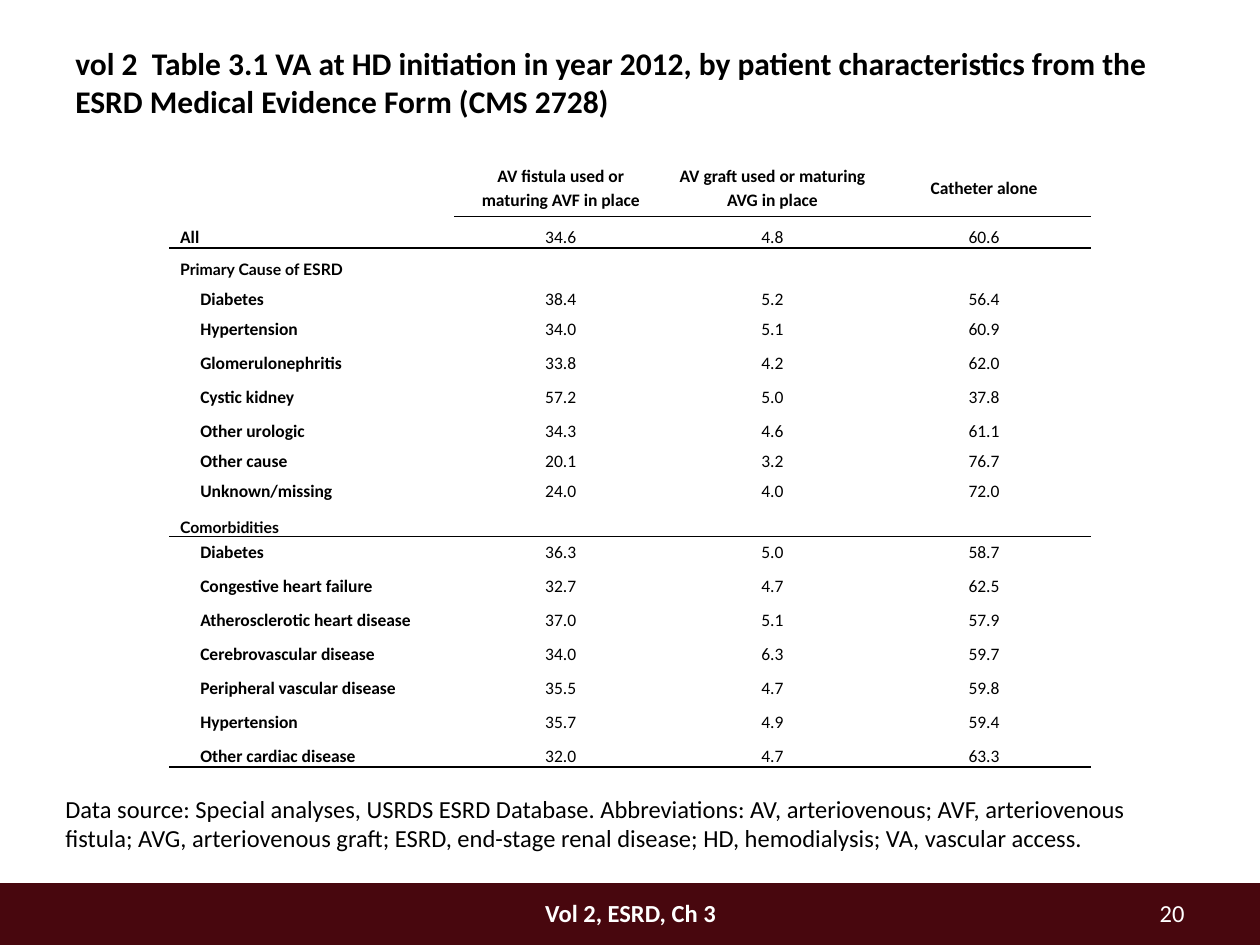
import lxml.etree
import pptx
import pptx.dml.color
import pptx.enum.shapes
import pptx.enum.text
import pptx.oxml.ns
import pptx.util

Inches, Pt = pptx.util.Inches, pptx.util.Pt
ALIGN, ANCHOR = pptx.enum.text.PP_ALIGN, pptx.enum.text.MSO_ANCHOR
BLACK = pptx.dml.color.RGBColor(0x00, 0x00, 0x00)
WHITE = pptx.dml.color.RGBColor(0xFF, 0xFF, 0xFF)
MAROON = pptx.dml.color.RGBColor(0x48, 0x07, 0x0E)

VALUE = {"name": "Calibri", "size": Pt(10), "bold": False}
LABEL = VALUE | {"bold": True}
SECTION = {"name": "Lato", "size": Pt(9), "bold": True}


def write(paragraph, text, font, color=BLACK, alignment=ALIGN.LEFT):
    paragraph.alignment = alignment
    run = paragraph.add_run()
    run.text = text
    for attribute, value in font.items():
        setattr(run.font, attribute, value)
    run.font.color.rgb = color


def add_border(cell, side):
    properties = cell._tc.get_or_add_tcPr()
    line = lxml.etree.Element(pptx.oxml.ns.qn(f"a:{side}"), w=str(Pt(1)))
    fill = lxml.etree.SubElement(line, pptx.oxml.ns.qn("a:solidFill"))
    lxml.etree.SubElement(fill, pptx.oxml.ns.qn("a:srgbClr"), val=str(BLACK))
    properties.insert(0, line)


deck = pptx.Presentation()
deck.slide_width, deck.slide_height = Inches(10), Inches(7.5)
slide = deck.slides.add_slide(deck.slide_layouts[6])

# Footer band
band = slide.shapes.add_shape(pptx.enum.shapes.MSO_SHAPE.RECTANGLE,
                              Inches(0), Inches(7.01), Inches(10), Inches(0.5))
band.shadow.inherit = False
band.fill.solid()
band.fill.fore_color.rgb = MAROON
band.line.fill.background()

# Title, source note, chapter and page number
texts = [
    ((0.5, 0.3, 9, 0.62), 18, True, BLACK, ALIGN.LEFT,
     "vol 2  Table 3.1 VA at HD initiation in year 2012, by patient "
     "characteristics from the ESRD Medical Evidence Form (CMS 2728)"),
    ((0.42, 6.25, 9.08, 0.58), 14, False, BLACK, ALIGN.LEFT,
     "Data source: Special analyses, USRDS ESRD Database. Abbreviations: AV, "
     "arteriovenous; AVF, arteriovenous fistula; AVG, arteriovenous graft; "
     "ESRD, end-stage renal disease; HD, hemodialysis; VA, vascular access."),
    ((3.92, 7.08, 2.17, 0.33), 14, True, WHITE, ALIGN.CENTER, "Vol 2, ESRD, Ch 3"),
    ((8.5, 7.08, 1, 0.3), 14, False, WHITE, ALIGN.RIGHT, "20"),
]
for place, size, bold, color, alignment, text in texts:
    frame = slide.shapes.add_textbox(*map(Inches, place)).text_frame
    frame.word_wrap = True
    font = {"name": "Calibri", "size": Pt(size), "bold": bold}
    write(frame.paragraphs[0], text, font, color, alignment)

# Vascular access by patient characteristic: row height, then cell texts
rows = [
    (0.47, "", "AV fistula used or maturing AVF in place",
     "AV graft used or maturing AVG in place", "Catheter alone"),
    (0.25, "All", "34.6", "4.8", "60.6"),
    (0.24, "Primary Cause of ESRD", "", "", ""),
    (0.25, "Diabetes", "38.4", "5.2", "56.4"),
    (0.24, "Hypertension", "34.0", "5.1", "60.9"),
    (0.27, "Glomerulonephritis", "33.8", "4.2", "62.0"),
    (0.27, "Cystic kidney", "57.2", "5.0", "37.8"),
    (0.27, "Other urologic", "34.3", "4.6", "61.1"),
    (0.24, "Other cause", "20.1", "3.2", "76.7"),
    (0.24, "Unknown/missing", "24.0", "4.0", "72.0"),
    (0.27, "Comorbidities", "", "", ""),
    (0.21, "Diabetes", "36.3", "5.0", "58.7"),
    (0.27, "Congestive heart failure", "32.7", "4.7", "62.5"),
    (0.27, "Atherosclerotic heart disease", "37.0", "5.1", "57.9"),
    (0.27, "Cerebrovascular disease", "34.0", "6.3", "59.7"),
    (0.27, "Peripheral vascular disease", "35.5", "4.7", "59.8"),
    (0.27, "Hypertension", "35.7", "4.9", "59.4"),
    (0.27, "Other cardiac disease", "32.0", "4.7", "63.3"),
]
HEADER, ALL, COMORBIDITIES, LAST = 0, 1, 10, len(rows) - 1
RULED = (HEADER, ALL, COMORBIDITIES, LAST)

access = slide.shapes.add_table(len(rows), 4, Inches(1.35), Inches(1.25),
                                Inches(7.3), Inches(4.84)).table
access.first_row = access.horz_banding = False
for column, width in zip(access.columns, (2.26, 1.68, 1.68, 1.68)):
    column.width = Inches(width)

for r, (height, *cells) in enumerate(rows):
    access.rows[r].height = Inches(height)
    is_section = r > HEADER and not cells[1]
    for c, text in enumerate(cells):
        cell = access.cell(r, c)
        cell.fill.background()
        cell.margin_left = cell.margin_right = Inches(0.08)
        cell.margin_top = cell.margin_bottom = Inches(0)
        cell.vertical_anchor = ANCHOR.MIDDLE if r == HEADER else ANCHOR.BOTTOM

        # A rule belongs to the row above it and the row below it
        if r in RULED and (r, c) != (HEADER, 0):
            add_border(cell, "lnB")
        if r - 1 in RULED and (r - 1, c) != (HEADER, 0):
            add_border(cell, "lnT")

        paragraph = cell.text_frame.paragraphs[0]
        if not text:
            # Small end mark keeps the empty cell from stretching its row
            lxml.etree.SubElement(paragraph._p, pptx.oxml.ns.qn("a:endParaRPr"), sz="1000")
            continue
        paragraph.line_spacing = 1.15
        if c == 0:
            if r > ALL and not is_section:
                paragraph._p.get_or_add_pPr().set("marL", str(Inches(0.16)))
            write(paragraph, text, SECTION if is_section else LABEL)
        else:
            write(paragraph, text, LABEL if r == HEADER else VALUE,
                  alignment=ALIGN.CENTER)

deck.save("out.pptx")
